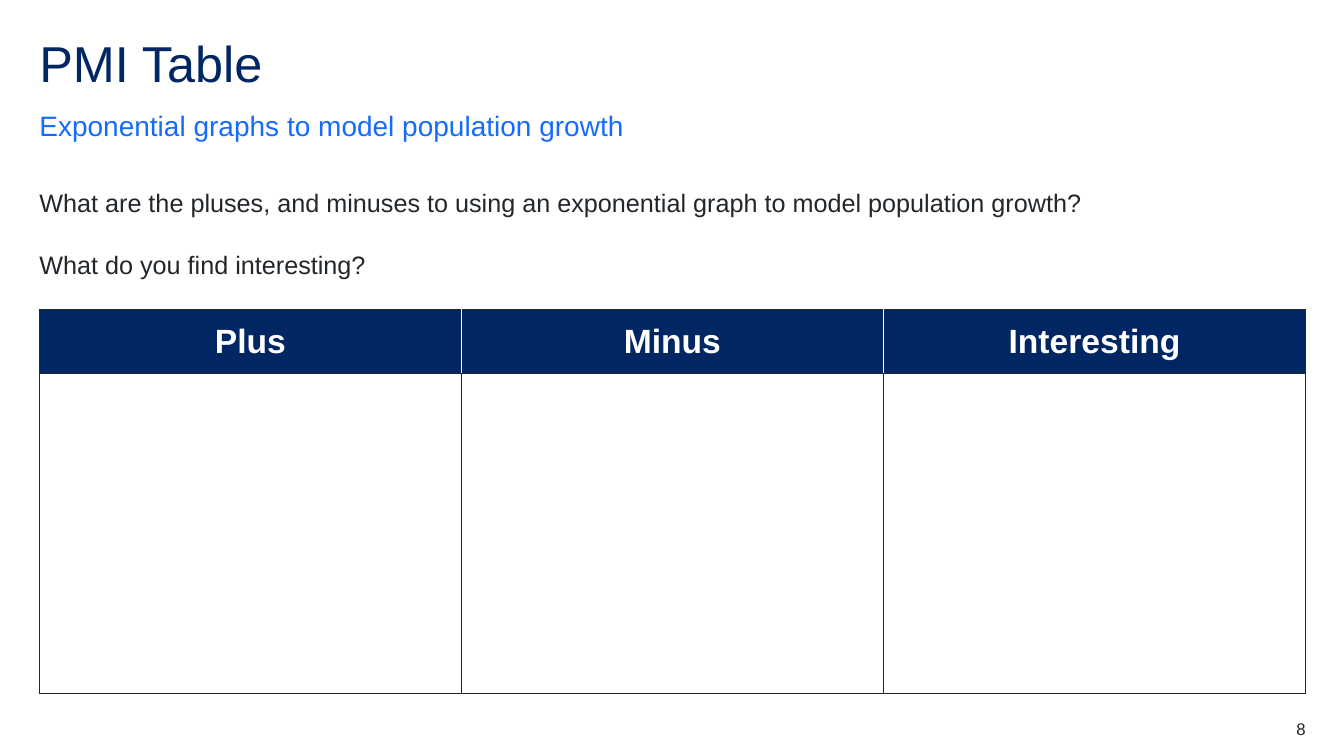
"""Builds the PMI table slide on exponential population growth."""
from lxml import etree
from pptx import Presentation
from pptx import util as u
from pptx.dml.color import RGBColor
from pptx.enum import text
from pptx.oxml import ns

NAVY = RGBColor(0x00, 0x26, 0x64)
BLUE = RGBColor(0x14, 0x6C, 0xFD)
INK = RGBColor(0x22, 0x27, 0x2B)
WHITE = RGBColor(0xFF, 0xFF, 0xFF)
LEFT, COLUMN = 28.1, 301.5
WIDTH = 3 * COLUMN


def write(shape, box, lines, size, color, spacing=1, after=0,
          align=text.PP_ALIGN.LEFT, anchor=text.MSO_ANCHOR.TOP):
    shape.left, shape.top, shape.width, shape.height = map(u.Pt, box)
    frame = shape.text_frame
    frame.word_wrap = True
    frame.auto_size = text.MSO_AUTO_SIZE.NONE
    frame.vertical_anchor = anchor
    frame.margin_left = frame.margin_top = frame.margin_right = frame.margin_bottom = 0
    for i, line in enumerate(lines):
        paragraph = frame.paragraphs[0] if i == 0 else frame.add_paragraph()
        properties = paragraph._p.get_or_add_pPr()
        properties.set("marL", "0")
        properties.set("indent", "0")
        etree.SubElement(properties, ns.qn("a:buNone"))
        paragraph.alignment = align
        paragraph.line_spacing = spacing
        paragraph.space_before = u.Pt(0)
        paragraph.space_after = u.Pt(after)
        run = paragraph.add_run()
        run.text = line
        run.font.name = "Arial"
        run.font.size = u.Pt(size)
        run.font.color.rgb = color


def add_border(cell, side, color, width):
    line = etree.SubElement(cell._tc.get_or_add_tcPr(), ns.qn(f"a:ln{side}"), w=str(u.Pt(width)))
    fill = etree.SubElement(line, ns.qn("a:solidFill"))
    etree.SubElement(fill, ns.qn("a:srgbClr"), val=str(color))


deck = Presentation()
deck.slide_width, deck.slide_height = u.Pt(960), u.Pt(540)
slide = deck.slides.add_slide(deck.slide_layouts[3])
title, subtitle, questions = slide.placeholders

write(title, (LEFT, 28.1, WIDTH, 43.2), ["PMI Table"], 36, NAVY, spacing=0.9)
write(subtitle, (LEFT, 77, WIDTH, 24.5), ["Exponential graphs to model population growth"],
      20, BLUE, spacing=1.5, after=12, anchor=text.MSO_ANCHOR.BOTTOM)
write(questions, (LEFT, 123.1, WIDTH, 75.6),
      ["What are the pluses, and minuses to using an exponential graph to model population growth?",
       "What do you find interesting?"],
      18, INK, spacing=1.5, after=12)

pmi = slide.shapes.add_table(2, 3, u.Pt(LEFT), u.Pt(221), u.Pt(WIDTH), u.Pt(274.3)).table
pmi.horz_banding = False
pmi.rows[0].height, pmi.rows[1].height = u.Pt(46), u.Pt(228.3)
for col, heading in enumerate(["Plus", "Minus", "Interesting"]):
    pmi.columns[col].width = u.Pt(COLUMN)
    for row, divider in enumerate([WHITE, NAVY]):
        cell = pmi.cell(row, col)
        for side, outer in (("L", col == 0), ("R", col == 2), ("T", True), ("B", True)):
            add_border(cell, side, INK if outer else divider, 1 if outer else 0.75)
        cell.fill.solid()
        cell.fill.fore_color.rgb = NAVY if row == 0 else WHITE
    header = pmi.cell(0, col)
    header.vertical_anchor = text.MSO_ANCHOR.MIDDLE
    paragraph = header.text_frame.paragraphs[0]
    paragraph.alignment = text.PP_ALIGN.CENTER
    run = paragraph.add_run()
    run.text = heading
    run.font.name = "Arial"
    run.font.size = u.Pt(24)
    run.font.bold = True
    run.font.color.rgb = WHITE

page_number = slide.shapes.add_textbox(0, 0, 0, 0)
write(page_number, (876, 513.4, 56.6, 14.4), ["8"], 12, INK, align=text.PP_ALIGN.RIGHT)

deck.save("out.pptx")
